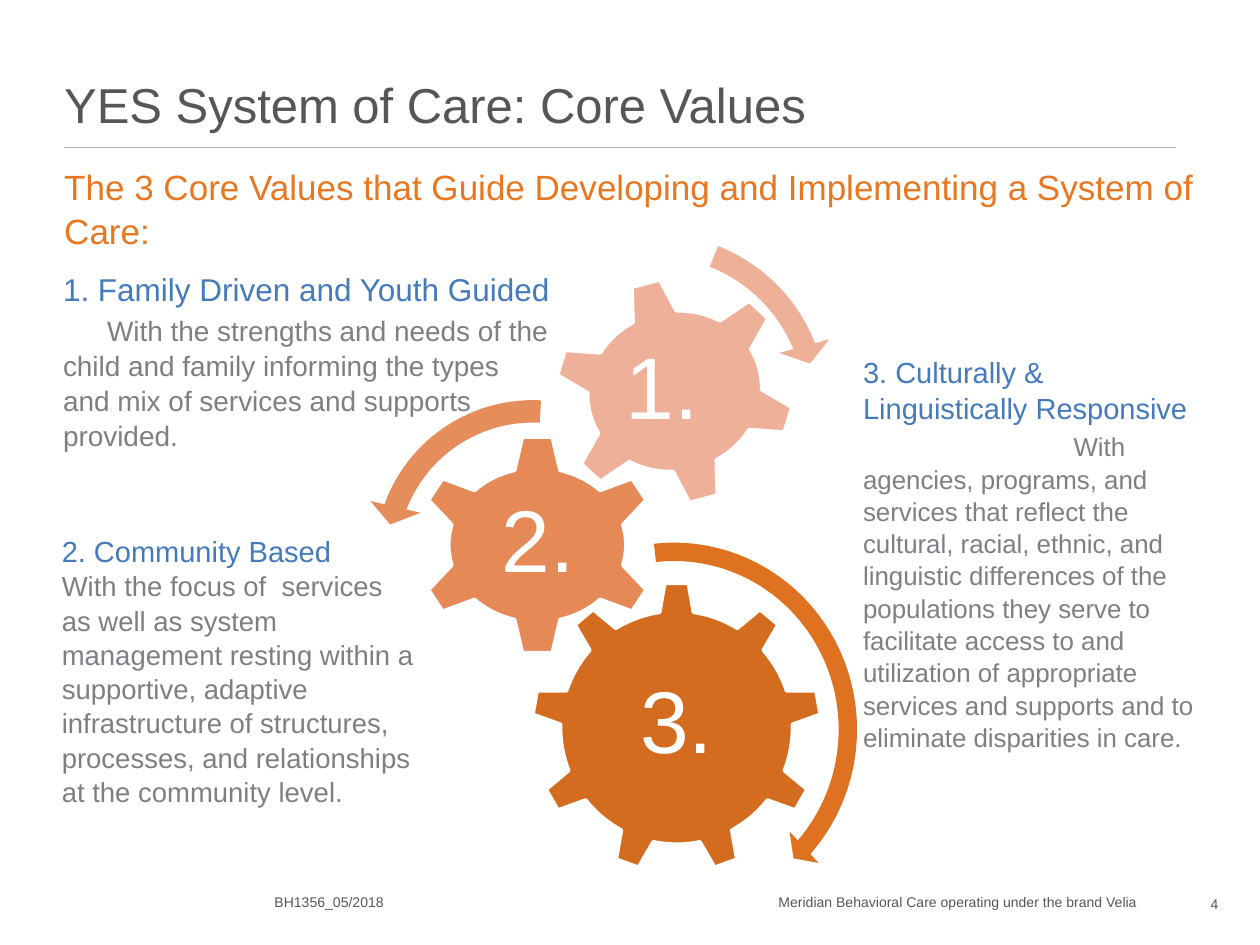
from lxml import etree
from pptx import Presentation
from pptx.dml.color import RGBColor
from pptx.enum.shapes import MSO_CONNECTOR, MSO_SHAPE
from pptx.enum.text import MSO_ANCHOR, MSO_AUTO_SIZE, PP_ALIGN
from pptx.oxml.ns import qn
from pptx.util import Inches, Pt

TOP, MIDDLE, BOTTOM = MSO_ANCHOR.TOP, MSO_ANCHOR.MIDDLE, MSO_ANCHOR.BOTTOM
LEFT, CENTER, RIGHT = PP_ALIGN.LEFT, PP_ALIGN.CENTER, PP_ALIGN.RIGHT
GEAR_6, GEAR_9 = MSO_SHAPE.GEAR_6, MSO_SHAPE.GEAR_9
ARROW, LEFT_ARROW = MSO_SHAPE.CIRCULAR_ARROW, MSO_SHAPE.LEFT_CIRCULAR_ARROW

FONT = "Arial"
COLORS = {
    "dark": "55565A", "body": "7E7F85", "accent": "E87722", "heading": "457ABB",
    "rule": "B1B3B3", "white": "FFFFFF",
    "gear1": "EFB099", "gear2": "E58957", "gear3": "D36C1F",
    "arrow1": "EFB098", "arrow2": "E68D5C", "arrow3": "DE7220",
}

# Placeholder index, box, heading, heading size, body, body size, first-line indent
VALUES = [
    (2, (0.4, 2.08, 4.08, 1.55), "1. Family Driven and Youth Guided", 18,
     "With the strengths and needs of the child and family informing the types "
     "and mix of services and supports provided.", 16, 0.35),
    (3, (0.39, 4.17, 3.01, 2.33), "2. Community Based", 16.6,
     "With the focus of  services as well as system management resting within a "
     "supportive, adaptive infrastructure of structures, processes, and "
     "relationships at the community level.", 15.7, 0),
    (4, (6.75, 2.75, 2.97, 3.3), "3. Culturally & Linguistically Responsive", 16.6,
     "With agencies, programs, and services that reflect the cultural, racial, "
     "ethnic, and linguistic differences of the populations they serve to "
     "facilitate access to and utilization of appropriate services and supports "
     "and to eliminate disparities in care.", 14.8, 1.67),
]

# Preset, box, rotation, colour, number, number box
GEARS = [
    (GEAR_9, (4.22, 4.62, 2.3, 2.31), 0, "gear3", "3.", (4.68, 5.16, 1.38, 1.19)),
    (GEAR_6, (3.3, 3.45, 1.93, 1.75), 0, "gear2", "2.", (3.77, 3.89, 1, 0.86)),
    (GEAR_6, (4.39, 2.2, 1.93, 1.81), 345, "gear1", "1.", (4.72, 2.59, 1.07, 1.03)),
]

# Preset, box, rotation, colour, adjustments
ARROWS = [
    (ARROW, (3.8, 4.21, 3.1, 3.16), 0, "arrow3", (0.047, 2.99, 25.308, 158.301, 0.055)),
    (LEFT_ARROW, (2.86, 3.06, 2.74, 2.74), 25.6, "arrow2",
     (0.065, 4.3, 104.891, 148.378, 0.075)),
    (ARROW, (3.72, 1.74, 2.96, 2.96), 116.3, "arrow1",
     (0.06, 3.941, 133.138, 105.082, 0.07)),
]


def rgb(name):
    return RGBColor.from_string(COLORS[name])


def place(sp, box):
    sp.left, sp.top, sp.width, sp.height = map(Inches, box)


def setup_frame(tf, anchor=TOP, insets=(0.1, 0.05)):
    tf.word_wrap = True
    tf.auto_size = MSO_AUTO_SIZE.NONE
    tf.vertical_anchor = anchor
    tf.margin_left = tf.margin_right = Inches(insets[0])
    tf.margin_top = tf.margin_bottom = Inches(insets[1])


def write(p, text, size, color, align=LEFT, spacing=1.0, before=0):
    p.text = text
    p.alignment = align
    p.line_spacing = spacing
    p.space_before, p.space_after = Pt(before), Pt(0)
    for r in p.runs:
        r.font.name, r.font.size, r.font.bold = FONT, Pt(size), False
        r.font.color.rgb = rgb(color)


def plain_list(p, indent=0):
    """Drop the inherited bullet and set the first-line indent."""
    pPr = p._p.get_or_add_pPr()
    pPr.set("marL", "0")
    pPr.set("indent", str(Inches(indent)))
    etree.SubElement(pPr, qn("a:buNone"))


def add_body(s, idx, box, parts):
    """Fill a body placeholder; parts are (text, size, colour, indent)."""
    sp = s.placeholders[idx]
    place(sp, box)
    tf = sp.text_frame
    setup_frame(tf)
    for i, (text, size, color, indent) in enumerate(parts):
        p = tf.add_paragraph() if i else tf.paragraphs[0]
        plain_list(p, indent)
        write(p, text, size, color, spacing=1.04, before=2.5 if indent else 0)


def add_text(s, box, text, size, color, align=LEFT, anchor=TOP,
             insets=(0.1, 0.05), spacing=1.0):
    sp = s.shapes.add_textbox(*map(Inches, box))
    setup_frame(sp.text_frame, anchor, insets)
    p = sp.text_frame.paragraphs[0]
    write(p, text, size, color, align, spacing)
    return p


def add_preset(s, preset, box, rotation, color, line=None, adjustments=()):
    sp = s.shapes.add_shape(preset, *map(Inches, box))
    sp.shadow.inherit = False
    sp.rotation = rotation
    sp.fill.solid()
    sp.fill.fore_color.rgb = rgb(color)
    if line:
        sp.line.color.rgb = rgb(line)
        sp.line.width = Pt(2)
    else:
        sp.line.fill.background()
    for i, value in enumerate(adjustments):
        sp.adjustments[i] = value


def add_rule(s, x1, x2, y):
    line = s.shapes.add_connector(
        MSO_CONNECTOR.STRAIGHT, Inches(x1), Inches(y), Inches(x2), Inches(y))
    line.line.color.rgb = rgb("rule")
    line.line.width = Pt(0.75)
    etree.SubElement(line._element.spPr, qn("a:effectLst"))


def add_footer(s):
    p = add_text(s, (2.08, 7.04, 7.17, 0.24),
                 "BH1356_05/2018\tMeridian Behavioral Care operating under the brand Velia",
                 8, "dark")
    tabs = etree.SubElement(p._p.get_or_add_pPr(), qn("a:tabLst"))
    etree.SubElement(tabs, qn("a:tab"), pos=str(Inches(4)), algn="l")
    add_text(s, (9.25, 7.04, 0.42, 0.27), "4", 8, "dark", RIGHT, MIDDLE, (0, 0))


def main():
    prs = Presentation()
    prs.slide_width, prs.slide_height = Inches(10), Inches(7.5)
    s = prs.slides.add_slide(prs.slide_layouts.get_by_name("Comparison"))

    # Title and rule
    title = s.shapes.title
    place(title, (0.51, 0.17, 6.63, 0.89))
    setup_frame(title.text_frame, BOTTOM, (0, 0))
    write(title.text_frame.paragraphs[0], "YES System of Care: Core Values", 28, "dark")
    add_rule(s, 0.51, 9.33, 1.17)

    # Lead line and the three values
    lead = "The 3 Core Values that Guide Developing and Implementing a System of Care:"
    add_body(s, 1, (0.41, 1.25, 9.29, 0.52), [(lead, 20, "accent", 0)])
    for idx, box, heading, heading_size, body, body_size, indent in VALUES:
        add_body(s, idx, box, [(heading, heading_size, "heading", 0),
                               (body, body_size, "body", indent)])

    # Numbered gears and the arrows around them
    for preset, box, rotation, color, number, number_box in GEARS:
        add_preset(s, preset, box, rotation, color, line="white")
        add_text(s, number_box, number, 50, "white", CENTER, MIDDLE, (0.07, 0.07), 0.9)
    for preset, box, rotation, color, adjustments in ARROWS:
        add_preset(s, preset, box, rotation, color, adjustments=adjustments)

    add_footer(s)
    prs.save("out.pptx")


if __name__ == "__main__":
    main()
